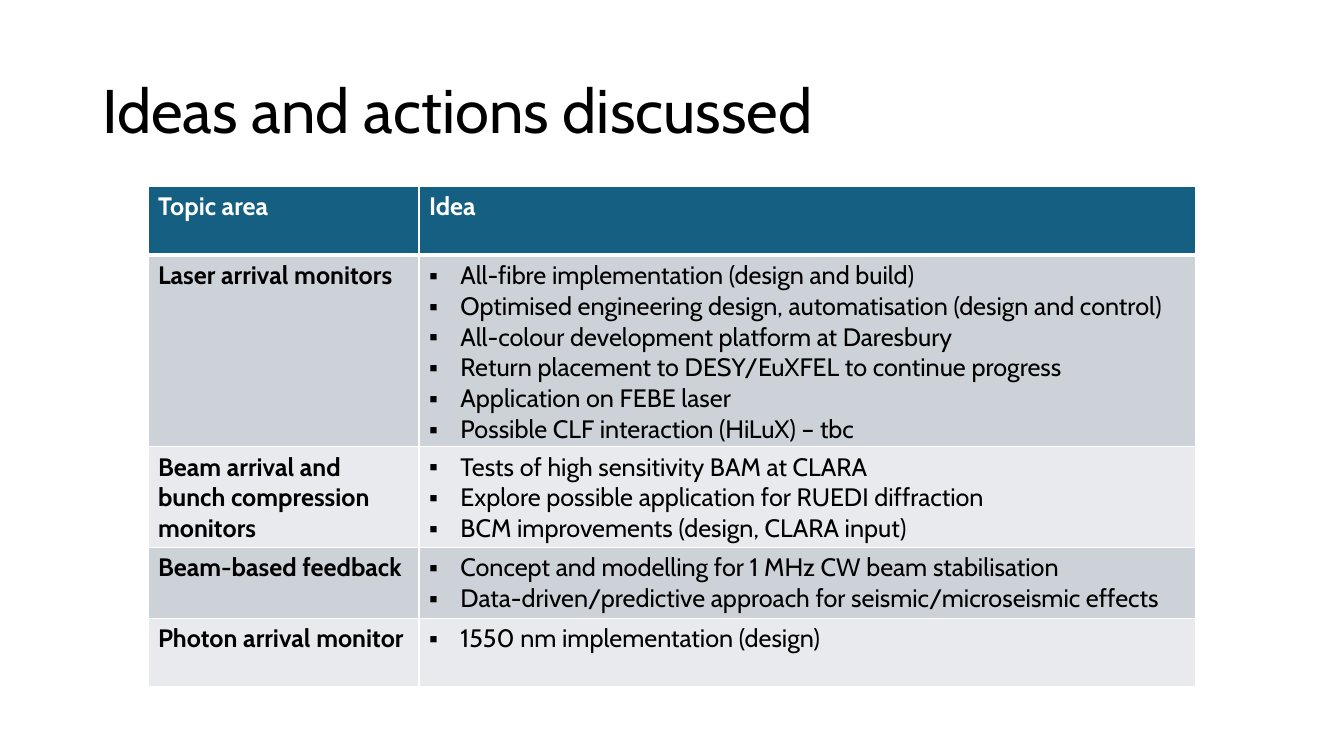
from lxml import etree
from pptx import Presentation
from pptx import util as u
from pptx.dml.color import RGBColor
from pptx.enum import text
from pptx.oxml import ns

BLACK = RGBColor(0x00, 0x00, 0x00)
WHITE = RGBColor(0xFF, 0xFF, 0xFF)
TEAL = RGBColor(0x15, 0x60, 0x82)
BAND_DARK = RGBColor(0xCC, 0xD2, 0xD8)
BAND_LIGHT = RGBColor(0xE8, 0xEA, 0xED)

TITLE = "Ideas and actions discussed"
HEADINGS = ("Topic area", "Idea")
TOPICS = [
    ("Laser arrival monitors", [
        "All-fibre implementation (design and build)",
        "Optimised engineering design, automatisation (design and control)",
        "All-colour development platform at Daresbury",
        "Return placement to DESY/EuXFEL to continue progress",
        "Application on FEBE laser",
        "Possible CLF interaction (HiLuX) – tbc",
    ]),
    ("Beam arrival and bunch compression monitors", [
        "Tests of high sensitivity BAM at CLARA",
        "Explore possible application for RUEDI diffraction",
        "BCM improvements (design, CLARA input)",
    ]),
    ("Beam-based feedback", [
        "Concept and modelling for 1 MHz CW beam stabilisation",
        "Data-driven/predictive approach for seismic/microseismic effects",
    ]),
    ("Photon arrival monitor", ["1550 nm implementation (design)"]),
]


class SlideBuilder:
    font = "Cabin"
    title_size = u.Pt(44)
    body_size = u.Pt(18)
    bullet = "▪"
    bullet_indent = u.Cm(0.79)

    def __init__(self, slide):
        self.slide = slide

    def style(self, para, size, color, bold=False):
        for span in para.runs:
            span.font.name = self.font
            span.font.size = size
            span.font.bold = bold
            span.font.color.rgb = color

    def title(self, wording, left, top, width, height):
        box = self.slide.shapes.add_textbox(left, top, width, height)
        frame = box.text_frame
        frame.word_wrap = True
        frame.vertical_anchor = text.MSO_ANCHOR.MIDDLE
        frame.text = wording
        para = frame.paragraphs[0]
        para.line_spacing = 0.9
        self.style(para, self.title_size, BLACK)

    def add_bullet(self, para):
        props = para._p.get_or_add_pPr()
        props.set("marL", str(self.bullet_indent))
        props.set("indent", str(-self.bullet_indent))
        etree.SubElement(props, ns.qn("a:buFont"), typeface="Arial")
        etree.SubElement(props, ns.qn("a:buChar"), char=self.bullet)

    def add_borders(self, cell, top_width, bottom_width):
        """Draw white rules on all four sides; widths are in points."""
        props = cell._tc.get_or_add_tcPr()
        sides = (("L", 1), ("R", 1), ("T", top_width), ("B", bottom_width))
        for index, (side, width) in enumerate(sides):
            line = etree.Element(ns.qn(f"a:ln{side}"), w=str(u.Pt(width)))
            fill = etree.SubElement(line, ns.qn("a:solidFill"))
            etree.SubElement(fill, ns.qn("a:srgbClr"), val=str(WHITE))
            props.insert(index, line)

    def fill_cell(self, cell, lines, fill, color=BLACK, bold=False, bulleted=False):
        cell.fill.solid()
        cell.fill.fore_color.rgb = fill
        cell.text_frame.text = "\n".join(lines)
        for para in cell.text_frame.paragraphs:
            self.style(para, self.body_size, color, bold)
            if bulleted:
                self.add_bullet(para)

    def topic_table(self, headings, topics, left, top, widths, row_height):
        rows = len(topics) + 1
        table = self.slide.shapes.add_table(
            rows, len(widths), left, top, sum(widths), row_height * rows).table
        for column, width in zip(table.columns, widths):
            column.width = width
        for row in table.rows:
            row.height = row_height
        for column, heading in enumerate(headings):
            self.fill_cell(table.cell(0, column), [heading], TEAL, WHITE, bold=True)
        for row, (topic, ideas) in enumerate(topics, start=1):
            band = BAND_DARK if row % 2 else BAND_LIGHT
            self.fill_cell(table.cell(row, 0), [topic], band, bold=True)
            self.fill_cell(table.cell(row, 1), ideas, band, bulleted=True)
        for row in range(rows):
            for column in range(len(widths)):
                self.add_borders(table.cell(row, column),
                                 top_width=3 if row == 1 else 1,
                                 bottom_width=3 if row == 0 else 1)


def main():
    deck = Presentation()
    deck.slide_width, deck.slide_height = u.Cm(33.87), u.Cm(19.05)
    page = SlideBuilder(deck.slides.add_slide(deck.slide_layouts[6]))
    page.title(TITLE, u.Cm(2.33), u.Cm(1.01), u.Cm(29.21), u.Cm(3.68))
    page.topic_table(HEADINGS, TOPICS, u.Cm(3.73), u.Cm(4.7),
                     (u.Cm(6.83), u.Cm(19.58)), u.Cm(1.73))
    deck.save("out.pptx")


if __name__ == "__main__":
    main()
